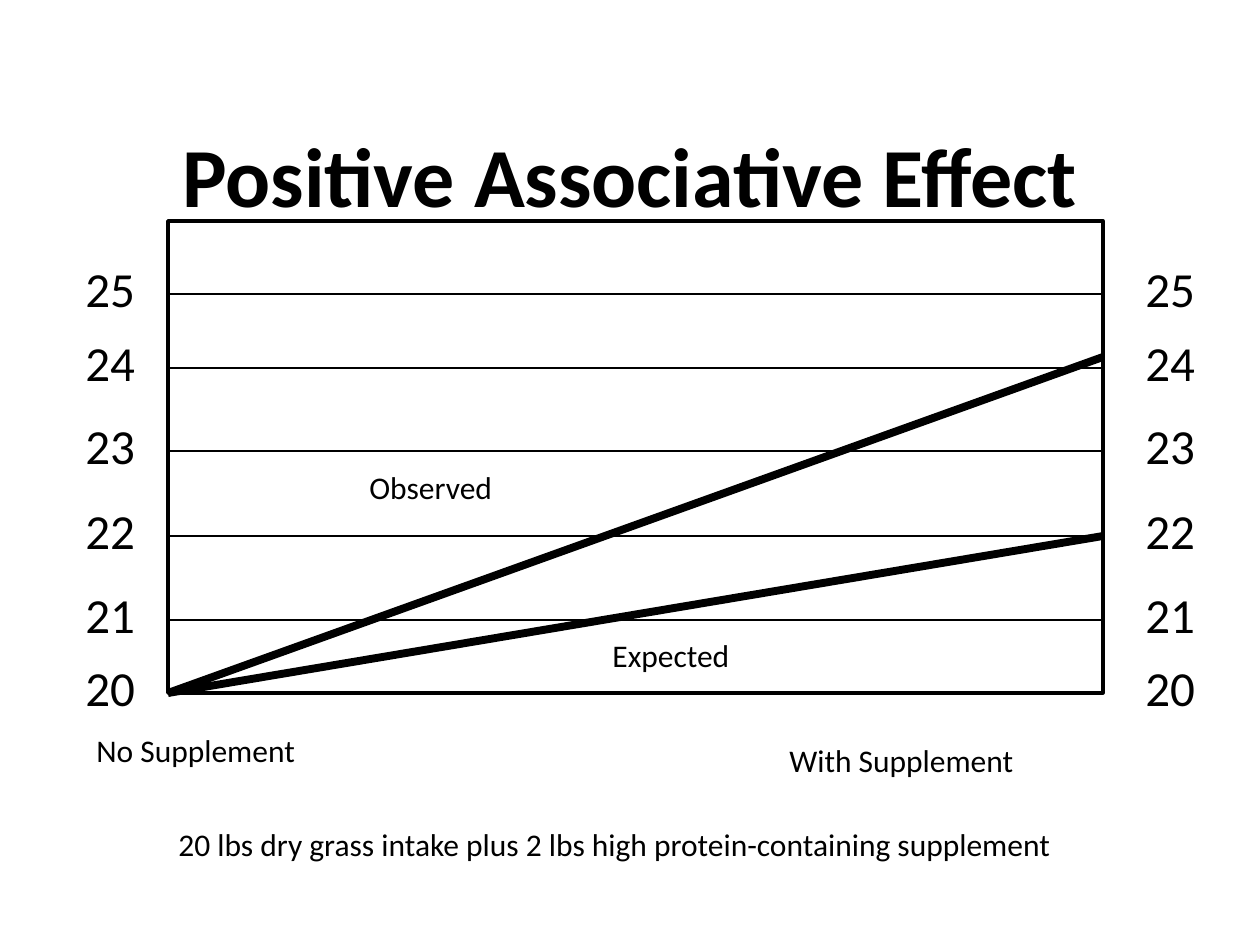
import pptx
import pptx.util
import pptx.dml.color
import pptx.enum.shapes
import pptx.enum.text
import pptx.oxml

# Content; all lengths in px, 126 to the inch
TITLE = "Positive Associative Effect"
LEVELS = {20: 693, 21: 620, 22: 536, 23: 451, 24: 368, 25: 294}  # intake: height
TRENDS = [("Expected", LEVELS[22]), ("Observed", 357)]
NOTES = [  # text, left, top, width, height, justified
    ("With Supplement", 777, 735, 341, 63, True),
    ("No Supplement", 84, 725, 341, 63, True),
    ("Expected", 600, 630, 319, 51, False),
    ("Observed", 357, 462, 198, 51, False),
    ("20 lbs dry grass intake plus 2 lbs high protein-containing supplement",
     166, 819, 951, 51, False),
]

BLACK = pptx.dml.color.RGBColor(0, 0, 0)
WHITE = pptx.dml.color.RGBColor(255, 255, 255)
FONT = "Calibri"
PLOT_LEFT, PLOT_TOP, PLOT_RIGHT = 168, 221, 1103
PLOT_BOTTOM = LEVELS[20]
LABEL_COLUMNS = (73, 1133)
LABEL_WIDTH, LABEL_HEIGHT, LABEL_RISE = 94, 72, 42
ALIGN = pptx.enum.text.PP_ALIGN


def px(length):
    return pptx.util.Emu(round(length * 914400 / 126))


def place(*lengths):
    return [px(length) for length in lengths]


def write(frame, text, size, align, bold=False):
    frame.word_wrap = True
    para = frame.paragraphs[0]
    para.alignment = align
    span = para.add_run()
    span.text = text
    formats = {"name": FONT, "size": pptx.util.Pt(size), "bold": bold}
    for name, value in formats.items():
        setattr(span.font, name, value)
    span.font.color.rgb = BLACK


def add_text(page, text, left, top, width, height, size, align=ALIGN.LEFT):
    box = page.shapes.add_textbox(*place(left, top, width, height))
    write(box.text_frame, text, size, align)


def add_line(page, start, end, weight):
    line = page.shapes.add_connector(
        pptx.enum.shapes.MSO_CONNECTOR.STRAIGHT,
        *place(PLOT_LEFT, start, PLOT_RIGHT, end))
    line.line.color.rgb = BLACK
    line.line.width = pptx.util.Pt(weight)
    line._element.spPr.append(pptx.oxml.parse_xml(
        '<a:effectLst xmlns:a="http://schemas.openxmlformats.org/drawingml/2006/main"/>'))


def main():
    deck = pptx.Presentation()
    deck.slide_width, deck.slide_height = place(1260, 945)
    page = deck.slides.add_slide(deck.slide_layouts[5])

    # Title
    title = page.shapes.title
    title.left, title.top, title.width, title.height = place(0, 95, 1260, 157)
    title.text_frame.vertical_anchor = pptx.enum.text.MSO_ANCHOR.MIDDLE
    write(title.text_frame, TITLE, 48, ALIGN.CENTER, bold=True)

    # Plot frame
    plot = page.shapes.add_shape(
        pptx.enum.shapes.MSO_SHAPE.RECTANGLE,
        *place(PLOT_LEFT, PLOT_TOP, PLOT_RIGHT - PLOT_LEFT, PLOT_BOTTOM - PLOT_TOP))
    plot.shadow.inherit = False
    plot.fill.solid()
    plot.fill.fore_color.rgb = WHITE
    plot.line.color.rgb = BLACK
    plot.line.width = pptx.util.Pt(2)

    # Grid lines and the scale on both sides
    for level, height in LEVELS.items():
        if height != PLOT_BOTTOM:
            add_line(page, height, height, 1)
        for left in LABEL_COLUMNS:
            add_text(page, str(level), left, height - LABEL_RISE,
                     LABEL_WIDTH, LABEL_HEIGHT, 28)

    # Trend lines
    for _, end in TRENDS:
        add_line(page, PLOT_BOTTOM, end, 4.5)

    # Captions
    for text, left, top, width, height, justified in NOTES:
        add_text(page, text, left, top, width, height, 18,
                 ALIGN.JUSTIFY if justified else ALIGN.LEFT)

    deck.save("out.pptx")


if __name__ == "__main__":
    main()
